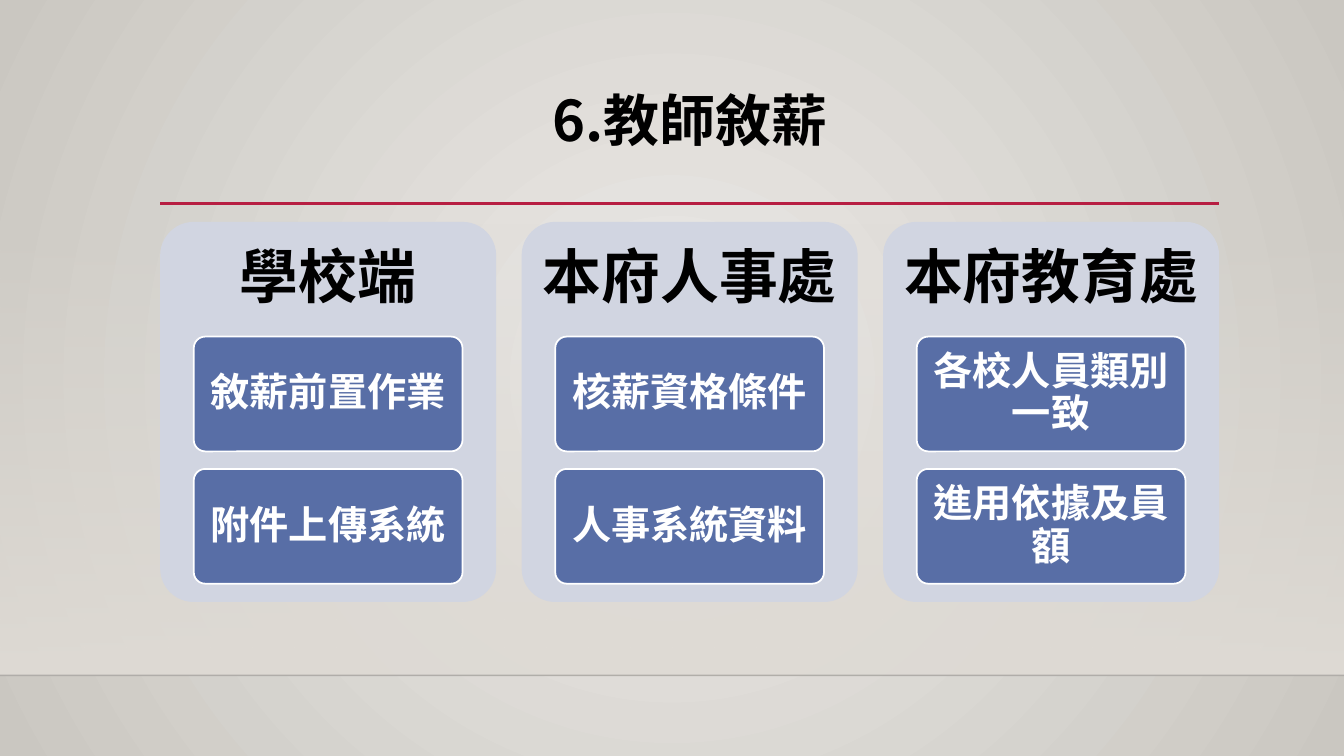
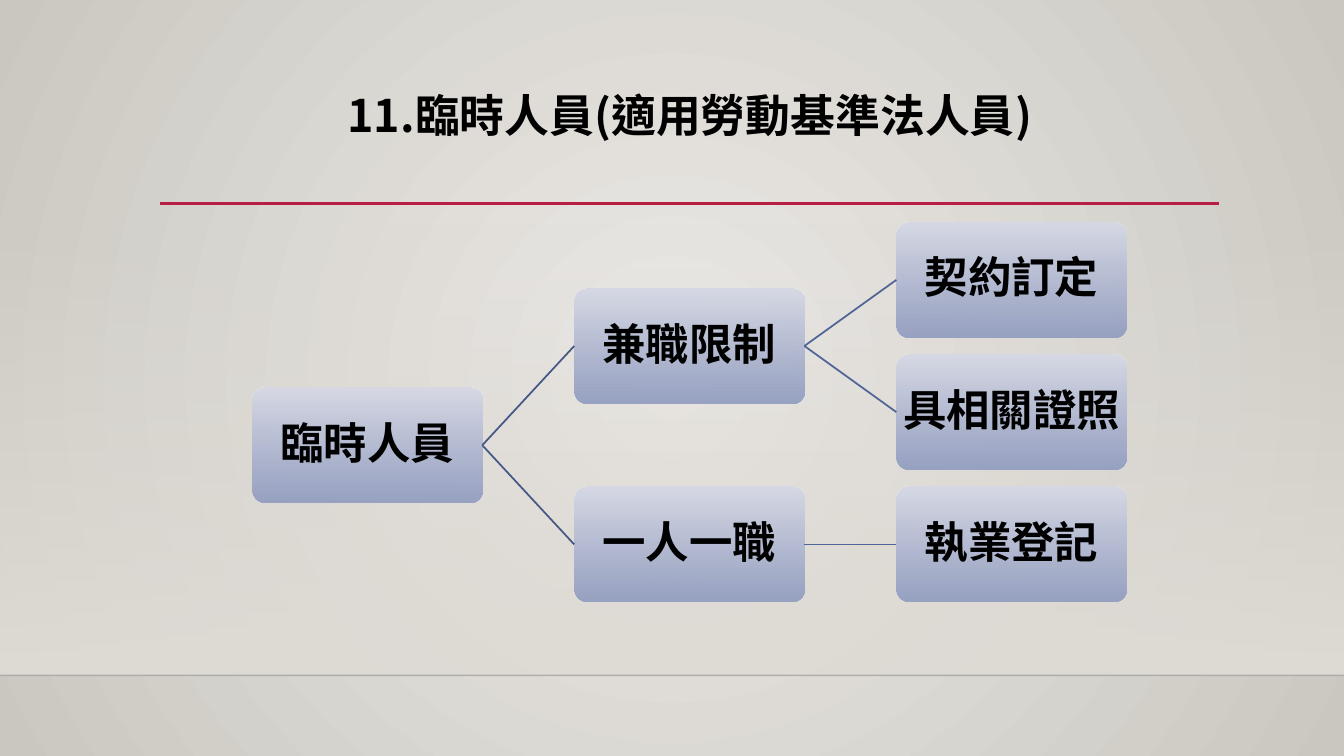
from dataclasses import dataclass

from lxml import etree
from pptx import Presentation
from pptx import util as u
from pptx.dml.color import RGBColor
from pptx.enum import shapes, text
from pptx.oxml import ns

FONT = "Noto Sans CJK SC"
BLACK, WHITE, RULE_RED = "000000", "FFFFFF", "B71E42"
CARD, STEP_FILL = "D1D5E1", "586EA6"
TRUNK, BRANCH = "465885", "506497"
WIDTH, HEIGHT = 960, 540
LEFT, RIGHT = 114.4, 871
FLOOR = 482.4

Box = tuple[float, float, float, float]
Stop = tuple[int, str, int]  # position %, colour, opacity %

BACKDROP: list[Stop] = [(0, "ECEAE7", 100), (100, "CAC7C1", 100)]
WALL: list[Stop] = [(0, "DFDBD5", 0), (100, "DFDBD5", 100)]
NODE_FILL: list[Stop] = [(0, "D6D9E5", 100), (100, "929DC0", 92)]


@dataclass(frozen=True)
class Department:
    name: str
    steps: tuple[str, ...]


@dataclass(frozen=True)
class Topic:
    name: str
    children: tuple["Topic", ...] = ()


DEPARTMENTS = (
    Department("學校端", ("敘薪前置作業", "附件上傳系統")),
    Department("本府人事處", ("核薪資格條件", "人事系統資料")),
    Department("本府教育處", ("各校人員類別一致", "進用依據及員額")),
)
TEMPORARY_STAFF = Topic("臨時人員", (
    Topic("兼職限制", (Topic("契約訂定"), Topic("具相關證照"))),
    Topic("一人一職", (Topic("執業登記"),)),
))


# --- Formatting helpers ---
def rgb(value: str) -> RGBColor:
    return RGBColor.from_string(value)


def apply(target, values: dict) -> None:
    for name, value in values.items():
        setattr(target, name, value)


def points(box: Box) -> list[u.Length]:
    return [u.Pt(value) for value in box]


def add_alpha(color, opacity: int) -> None:
    etree.SubElement(color, ns.qn("a:alpha"), val=str(opacity * 1000))


def set_gradient(holder, stops: list[Stop], radial: bool = False) -> None:
    """Replace the solid fill of a shape or background by a gradient."""
    grad = etree.Element(ns.qn("a:gradFill"), rotWithShape="1")
    stop_list = etree.SubElement(grad, ns.qn("a:gsLst"))
    for position, value, opacity in stops:
        stop = etree.SubElement(stop_list, ns.qn("a:gs"), pos=str(position * 1000))
        color = etree.SubElement(stop, ns.qn("a:srgbClr"), val=value)
        if opacity < 100:
            add_alpha(color, opacity)
    if radial:
        path = etree.SubElement(grad, ns.qn("a:path"), path="circle")
        etree.SubElement(path, ns.qn("a:fillToRect"),
                         dict.fromkeys("ltrb", "50000"))
    else:
        etree.SubElement(grad, ns.qn("a:lin"), ang="5400000", scaled="0")
    holder.replace(holder.find(ns.qn("a:solidFill")), grad)


def write(frame, words: str, size: float, color: str,
          inset: tuple[float, float] = (7.2, 3.6),
          anchor=text.MSO_ANCHOR.MIDDLE) -> None:
    across, down = (u.Pt(value) for value in inset)
    apply(frame, {"word_wrap": True, "auto_size": text.MSO_AUTO_SIZE.NONE,
                  "vertical_anchor": anchor,
                  "margin_left": across, "margin_right": across,
                  "margin_top": down, "margin_bottom": down})
    paragraph = frame.paragraphs[0]
    apply(paragraph, {"alignment": text.PP_ALIGN.CENTER, "line_spacing": 0.9})
    run = paragraph.add_run()
    run.text = words
    apply(run.font, {"size": u.Pt(size), "bold": True, "name": FONT})
    run.font.color.rgb = rgb(color)
    properties = run._r.get_or_add_rPr()
    properties.set("lang", "zh-TW")
    etree.SubElement(properties, ns.qn("a:ea"), typeface=FONT)


def add_block(slide, box: Box, fill: str, outline: str | None = None,
              kind=shapes.MSO_SHAPE.ROUNDED_RECTANGLE):
    block = slide.shapes.add_shape(kind, *points(box))
    block.shadow.inherit = False
    block.fill.solid()
    block.fill.fore_color.rgb = rgb(fill)
    if len(block.adjustments):
        block.adjustments[0] = 0.1
    if outline:
        block.line.color.rgb = rgb(outline)
        block.line.width = u.Pt(1.25)
    else:
        block.line.fill.background()
    return block


def add_line(slide, ends: Box, color: str, width: float):
    line = slide.shapes.add_connector(shapes.MSO_CONNECTOR.STRAIGHT, *points(ends))
    line.line.color.rgb = rgb(color)
    line.line.width = u.Pt(width)
    etree.SubElement(line._element.spPr, ns.qn("a:effectLst"))
    return line


# --- Shared look: background, wall, floor edge, title rule ---
def dress_layout(prs, layout, slide) -> None:
    master = prs.slide_master
    master.background.fill.solid()
    master.background.fill.fore_color.rgb = rgb(WHITE)
    set_gradient(master._element.cSld.bg.bgPr, BACKDROP, radial=True)

    wall = add_block(slide, (0, 159, WIDTH, FLOOR - 159), WHITE,
                     kind=shapes.MSO_SHAPE.RECTANGLE)
    set_gradient(wall._element.spPr, WALL)
    floor_edge = add_line(slide, (0, FLOOR, WIDTH, FLOOR), "000001", 1)
    add_alpha(floor_edge._element.spPr.find(".//" + ns.qn("a:srgbClr")), 20)
    title_rule = add_line(slide, (LEFT, 145.3, RIGHT, 145.3), RULE_RED, 2.5)
    for part in (wall, floor_edge, title_rule):
        layout.shapes._spTree.append(part._element)


def set_title(slide, words: str, size: float) -> None:
    title = slide.shapes.title
    apply(title, dict(zip(("left", "top", "width", "height"),
                          points((LEFT, 63.2, RIGHT - LEFT, 82.6)))))
    write(title.text_frame, words, size, BLACK, anchor=text.MSO_ANCHOR.TOP)


# --- Slide 1: one card per department ---
def draw_departments(slide) -> None:
    card_width, card_top, header_height = 240, 158.5, 81.5
    column_step, row_step, margin = 258.2, 94.5, 24
    for column, department in enumerate(DEPARTMENTS):
        left = LEFT + column * column_step
        add_block(slide, (left, card_top, card_width, 271.5), CARD)
        header = slide.shapes.add_textbox(
            *points((left, card_top, card_width, header_height)))
        write(header.text_frame, department.name, 42, BLACK, (12, 12))
        for row, step in enumerate(department.steps):
            top = card_top + header_height + 0.4 + row * row_step
            box = (left + margin, top, card_width - 2 * margin, 82)
            block = add_block(slide, box, STEP_FILL, WHITE)
            write(block.text_frame, step, 28, WHITE, (6, 4))


# --- Slide 2: tree, each parent centred on its children ---
def count_leaves(topic: Topic) -> int:
    return sum(map(count_leaves, topic.children)) or 1


def middle_row(topic: Topic, first_row: float) -> float:
    if not topic.children:
        return first_row
    last = topic.children[-1]
    last_row = first_row + count_leaves(topic) - count_leaves(last)
    return (middle_row(topic.children[0], first_row) + middle_row(last, last_row)) / 2


def draw_topic(slide, topic: Topic, level: int = 0, first_row: float = 0):
    top = 158.8 + middle_row(topic, first_row) * 94.5
    node = add_block(slide, (180.1 + level * 230.1, top, 164.4, 82.2), WHITE)
    set_gradient(node._element.spPr, NODE_FILL)
    write(node.text_frame, topic.name, 31, BLACK, (1.6, 1.6))
    for child in topic.children:
        child_node = draw_topic(slide, child, level + 1, first_row)
        link = add_line(slide, (0, 0, 0, 0), BRANCH if level else TRUNK, 1.25)
        link.begin_connect(node, 3)
        link.end_connect(child_node, 1)
        first_row += count_leaves(child)
    return node


def main() -> None:
    prs = Presentation()
    prs.slide_width, prs.slide_height = u.Pt(WIDTH), u.Pt(HEIGHT)
    layout = prs.slide_layouts[5]
    salary, temporary = (prs.slides.add_slide(layout) for _ in range(2))
    dress_layout(prs, layout, salary)

    set_title(salary, "6.教師敘薪", 40)
    draw_departments(salary)

    set_title(temporary, "11.臨時人員(適用勞動基準法人員)", 32)
    draw_topic(temporary, TEMPORARY_STAFF)
    prs.save("out.pptx")


if __name__ == "__main__":
    main()
